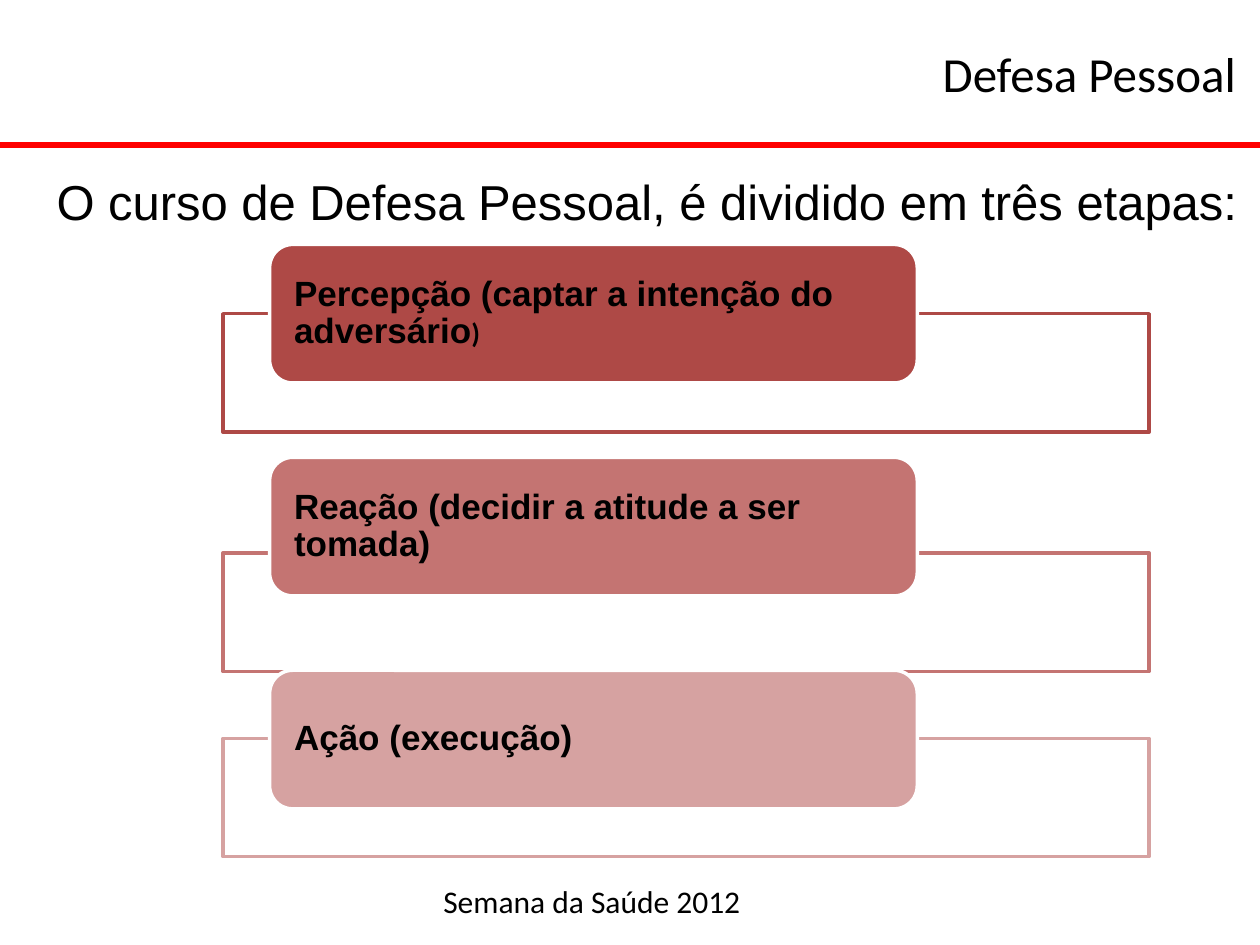
"""Build the slide on the three stages of the self-defence course."""
from dataclasses import dataclass

import pptx
import pptx.dml.color
import pptx.enum.shapes
import pptx.enum.text
import pptx.oxml
import pptx.oxml.ns
import pptx.util
from pptx.util import Inches

SHAPES = pptx.enum.shapes.MSO_SHAPE
ALIGN = pptx.enum.text.PP_ALIGN
ANCHOR = pptx.enum.text.MSO_ANCHOR
BLACK, WHITE, RED = "000000", "FFFFFF", "FF0000"
FIRST_LABEL_TOP, LABEL_STEP = 1.94, 1.69


@dataclass
class Run:
    text: str
    size: int
    font: str
    bold: bool = False


@dataclass
class Stage:
    frame_top: float
    color: str
    runs: list[Run]


STAGES = [
    Stage(2.49, "AE4946", [
        Run("Percepção (captar a intenção do adversário", 20, "Arial", True),
        Run(")", 16, "Calibri", True),
    ]),
    Stage(4.39, "C47472", [Run("Reação (decidir a atitude a ser tomada)", 20, "Arial", True)]),
    Stage(5.86, "D6A2A1", [Run("Ação (execução)", 20, "Arial", True)]),
]


def rgb(color: str) -> pptx.dml.color.RGBColor:
    return pptx.dml.color.RGBColor.from_string(color)


def write_runs(paragraph, runs: list[Run], align=ALIGN.LEFT) -> None:
    paragraph.alignment = align
    for item in runs:
        run = paragraph.add_run()
        run.text = item.text
        run.font.size = pptx.util.Pt(item.size)
        run.font.name = item.font
        run.font.bold = item.bold
        run.font.color.rgb = rgb(BLACK)


def add_title(slide, run: Run) -> None:
    title = slide.shapes.title
    title.left, title.top = Inches(7.29), Inches(0.29)
    title.width, title.height = Inches(2.71), Inches(0.57)
    title.text_frame.auto_size = pptx.enum.text.MSO_AUTO_SIZE.NONE
    title.text_frame.word_wrap = False
    write_runs(title.text_frame.paragraphs[0], [run], ALIGN.CENTER)


def add_rule(slide, top: float) -> None:
    rule = slide.shapes.add_connector(
        pptx.enum.shapes.MSO_CONNECTOR.STRAIGHT, 0, Inches(top), Inches(10), Inches(top))
    rule.line.color.rgb = rgb(RED)
    rule.line.width = pptx.util.Pt(3)
    pptx.oxml.ns.qn("a:effectLst")
    rule._element.spPr.append(pptx.oxml.parse_xml(
        f"<a:effectLst {pptx.oxml.ns.nsdecls('a')}/>"))


def add_text(slide, left: float, top: float, width: float, height: float,
             run: Run, wrap: bool) -> None:
    box = slide.shapes.add_textbox(Inches(left), Inches(top), Inches(width), Inches(height))
    box.text_frame.word_wrap = wrap
    write_runs(box.text_frame.paragraphs[0], [run])


def add_box(slide, kind, left: float, top: float, width: float, height: float,
            fill: str, line: str):
    shape = slide.shapes.add_shape(
        kind, Inches(left), Inches(top), Inches(width), Inches(height))
    shape.shadow.inherit = False
    shape.fill.solid()
    shape.fill.fore_color.rgb = rgb(fill)
    shape.line.color.rgb = rgb(line)
    shape.line.width = pptx.util.Pt(2)
    return shape


def add_stage(slide, stage: Stage, label_top: float) -> None:
    frame = add_box(slide, SHAPES.RECTANGLE, 1.77, stage.frame_top, 7.35, 0.94,
                    WHITE, stage.color)
    fill_color = frame._element.spPr.find(
        f"{pptx.oxml.ns.qn('a:solidFill')}/{pptx.oxml.ns.qn('a:srgbClr')}")
    fill_color.append(pptx.oxml.parse_xml(
        f"<a:alpha {pptx.oxml.ns.nsdecls('a')} val='90000'/>"))
    label = add_box(slide, SHAPES.ROUNDED_RECTANGLE, 2.14, label_top, 5.14, 1.1,
                    stage.color, WHITE)
    text_frame = label.text_frame
    text_frame.word_wrap = True
    text_frame.vertical_anchor = ANCHOR.MIDDLE
    text_frame.margin_left = text_frame.margin_right = Inches(0.14)
    text_frame.margin_top = text_frame.margin_bottom = 0
    text_frame.paragraphs[0].line_spacing = 0.9
    write_runs(text_frame.paragraphs[0], stage.runs)


def main() -> None:
    presentation = pptx.Presentation()
    presentation.slide_width, presentation.slide_height = Inches(10), Inches(7.5)
    slide = presentation.slides.add_slide(presentation.slide_layouts[5])
    add_title(slide, Run("Defesa Pessoal", 28, "Calibri"))
    add_rule(slide, 1.15)
    add_text(slide, 3.42, 6.95, 3.17, 0.4, Run("Semana da Saúde 2012", 18, "Calibri"), True)
    for index, stage in enumerate(STAGES):
        add_stage(slide, stage, FIRST_LABEL_TOP + index * LABEL_STEP)
    add_text(slide, 0.35, 1.31, 9.69, 0.57,
             Run("O curso de Defesa Pessoal, é dividido em três etapas:", 28, "Arial"), False)
    presentation.save("out.pptx")


if __name__ == "__main__":
    main()
